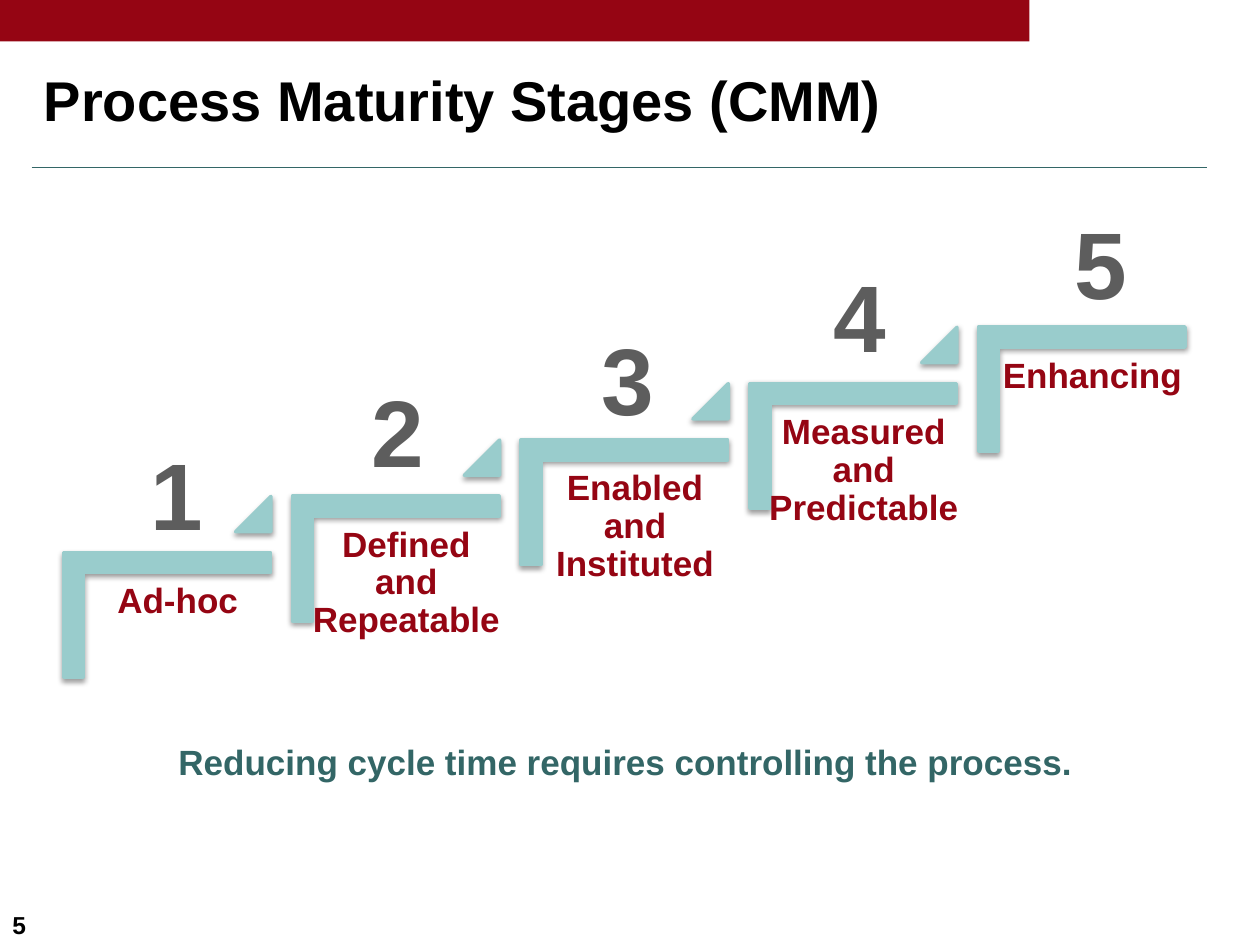
from dataclasses import dataclass

from lxml.etree import SubElement
from pptx import Presentation
from pptx.dml.color import RGBColor as Color
from pptx.enum.shapes import MSO_CONNECTOR as Connector, MSO_SHAPE as Shape
from pptx.enum.text import MSO_ANCHOR as Anchor, PP_ALIGN as Align
from pptx.oxml.ns import qn
from pptx.util import Inches, Pt


@dataclass(frozen=True)
class Theme:
    """Colours, font and type sizes of the slide."""
    font: str = "Arial"
    red: str = "950513"
    teal: str = "336666"
    step: str = "99CCCC"
    grey: str = "5D5D5D"
    black: str = "000000"
    title: int = 32
    body: int = 20
    number: int = 54
    small: int = 14


class SlideBuilder:
    """Draws styled elements on the current slide."""

    def __init__(self, slide, theme):
        self.slide = slide
        self.theme = theme

    def shape(self, kind, left, top, width, height, fill):
        shape = self.slide.shapes.add_shape(
            kind, Inches(left), Inches(top), Inches(width), Inches(height))
        shape.shadow.inherit = False
        shape.fill.solid()
        shape.fill.fore_color.rgb = Color.from_string(fill)
        shape.line.fill.background()
        return shape

    def step_shape(self, kind, left, top, width, height, adjustments):
        shape = self.shape(kind, left, top, width, height, self.theme.step)
        for index, value in enumerate(adjustments):
            shape.adjustments[index] = value
        shape.line.color.rgb = Color.from_string(self.theme.step)
        shape.line.width = Pt(2)
        effects = shape._element.spPr.find(qn("a:effectLst"))
        shadow = SubElement(effects, qn("a:outerShdw"), blurRad=str(Pt(3.1)),
                            dist=str(Pt(1.6)), dir="5400000", rotWithShape="0")
        tint = SubElement(shadow, qn("a:srgbClr"), val=self.theme.black)
        SubElement(tint, qn("a:alpha"), val="38000")
        return shape

    def rule(self, left, right, top):
        line = self.slide.shapes.add_connector(
            Connector.STRAIGHT, Inches(left), Inches(top), Inches(right), Inches(top))
        line.line.color.rgb = Color.from_string(self.theme.teal)
        line.line.width = Pt(0.75)
        SubElement(line._element.spPr, qn("a:effectLst"))

    def text(self, words, left, top, width, height, size, color,
             align=Align.CENTER, anchor=Anchor.TOP, inset=0.1, spacing=1.0):
        box = self.slide.shapes.add_textbox(
            Inches(left), Inches(top), Inches(width), Inches(height))
        frame = box.text_frame
        frame.word_wrap = True
        frame.vertical_anchor = anchor
        frame.margin_left = frame.margin_right = Inches(inset)
        frame.margin_top = frame.margin_bottom = Inches(min(inset, 0.05) if inset == 0.1 else inset)
        para = frame.paragraphs[0]
        para.text = words
        para.alignment = align
        para.line_spacing = spacing
        para.font.name = self.theme.font
        para.font.size = Pt(size)
        para.font.bold = True
        para.font.color.rgb = Color.from_string(color)

    def stage(self, left, top, label, label_width):
        corner = self.step_shape(Shape.CORNER, left, top, 0.99, 1.64, (0.161, 0.161))
        corner.rotation = 90
        self.text(label, left + 0.58 - label_width / 2, top + 0.49, label_width, 1.3,
                  self.theme.body, self.theme.red, inset=0.08, spacing=0.9)

    def riser(self, left, top):
        self.step_shape(Shape.ISOSCELES_TRIANGLE, left, top, 0.28, 0.28, (1,))

    def number(self, value, left, top):
        self.text(str(value), left, top, 0.81, 1.01, self.theme.number, self.theme.grey)


STAGES = [
    ("Ad-hoc", 1.48, (1, 3.41)),
    ("Defined and Repeatable", 1.65, (2.75, 2.91)),
    ("Enabled and Instituted", 1.75, (4.58, 2.5)),
    ("Measured and Predictable", 1.82, (6.42, 2)),
    ("Enhancing", 1.65, (8.33, 1.58)),
]


def main():
    theme = Theme()
    deck = Presentation()
    deck.slide_width, deck.slide_height = Inches(10), Inches(7.5)
    page = SlideBuilder(deck.slides.add_slide(deck.slide_layouts[6]), theme)

    page.shape(Shape.RECTANGLE, 0, 0, 8.17, 0.33, theme.red)
    page.rule(0.25, 9.58, 1.33)
    page.text("Process Maturity Stages (CMM)", 0.25, 0.33, 9.33, 0.92,
              theme.title, theme.black, Align.LEFT, Anchor.MIDDLE)
    page.text("5", 0, 7.17, 1.33, 0.33, theme.small, theme.black, Align.LEFT)
    page.text("Reducing cycle time requires controlling the process.",
              1.24, 5.83, 7.45, 0.44, theme.body, theme.teal)

    for index, (label, label_width, number_at) in enumerate(STAGES):
        left, top = 0.83 + 1.815 * index, 4.06 - 0.4475 * index
        page.stage(left, top, label, label_width)
        if index < len(STAGES) - 1:
            page.riser(left + 1.04, top - 0.12)
        page.number(index + 1, *number_at)

    deck.save("out.pptx")


if __name__ == "__main__":
    main()
